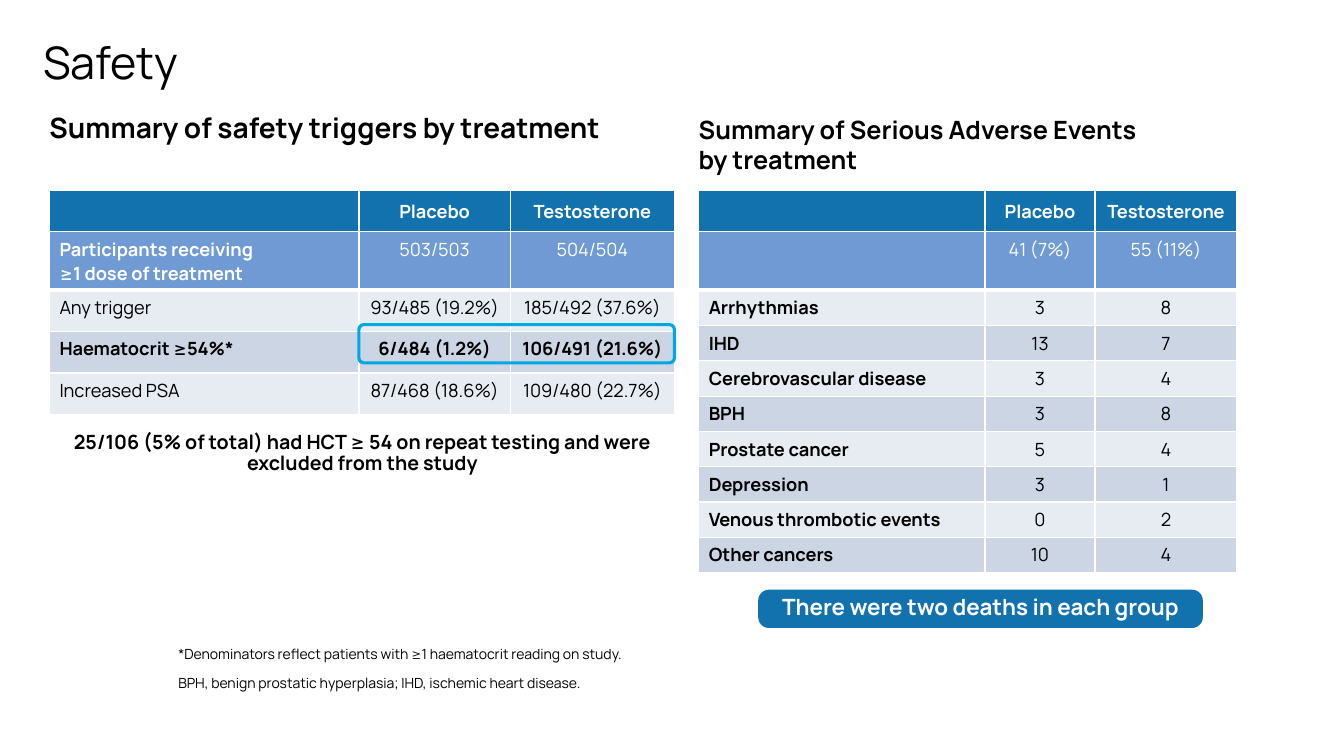
from dataclasses import dataclass

import pptx
import pptx.dml.color
import pptx.enum.shapes
import pptx.enum.text
import pptx.oxml
import pptx.oxml.ns
import pptx.util

SCALE = 9144  # EMU per px, at 100 px to the inch
FONT = "Manrope"
COLORS = {
    "black": "000000",
    "white": "FFFFFF",
    "header": "1272AE",
    "total": "6F9AD3",
    "light": "E7EBF2",
    "dark": "CCD5E3",
    "highlight": "00A8E1",
}
ALIGN = pptx.enum.text.PP_ALIGN
ANCHOR = pptx.enum.text.MSO_ANCHOR
ROUNDED = pptx.enum.shapes.MSO_SHAPE.ROUNDED_RECTANGLE


@dataclass
class Box:
    left: int
    top: int
    width: int
    height: int

    def emu(self) -> list[int]:
        return [px(v) for v in (self.left, self.top, self.width, self.height)]


@dataclass
class TextBlock:
    box: Box
    paragraphs: list[str]
    size: int
    bold: bool = False
    line_spacing: float = 0.9
    align: ALIGN = ALIGN.LEFT
    anchor: ANCHOR = ANCHOR.TOP
    inset: int = 10


@dataclass
class TableRow:
    cells: tuple[str, str, str]
    fill: str
    height: int
    label_bold: bool = False
    value_bold: bool = False
    anchor: ANCHOR = ANCHOR.TOP


def px(length: int) -> int:
    return pptx.util.Emu(length * SCALE)


def rgb(name: str) -> pptx.dml.color.RGBColor:
    return pptx.dml.color.RGBColor.from_string(COLORS[name])


def write(paragraph, text: str, size: int, color: str, bold: bool) -> None:
    for index, line in enumerate(text.split("\n")):
        if index:
            paragraph.add_line_break()
        run = paragraph.add_run()
        run.text = line
        run.font.name = FONT
        run.font.size = pptx.util.Pt(size)
        run.font.bold = bold
        run.font.color.rgb = rgb(color)


def add_text(slide, block: TextBlock) -> None:
    frame = slide.shapes.add_textbox(*block.box.emu()).text_frame
    frame.word_wrap = True
    frame.vertical_anchor = block.anchor
    frame.margin_left = px(block.inset)
    for index, text in enumerate(block.paragraphs):
        paragraph = frame.add_paragraph() if index else frame.paragraphs[0]
        paragraph.alignment = block.align
        paragraph.line_spacing = block.line_spacing
        if index:
            paragraph.space_before = pptx.util.Pt(10)
        write(paragraph, text, block.size, "black", block.bold)


def add_borders(cell, top: int, bottom: int) -> None:
    properties = cell._tc.get_or_add_tcPr()
    for side, points in (("L", 1), ("R", 1), ("T", top), ("B", bottom)):
        properties.append(pptx.oxml.parse_xml(
            f'<a:ln{side} {pptx.oxml.ns.nsdecls("a")} w="{pptx.util.Pt(points)}">'
            f'<a:solidFill><a:srgbClr val="{COLORS["white"]}"/></a:solidFill>'
            f'</a:ln{side}>'))


def add_table(slide, left: int, top: int, widths: list[int], rows: list[TableRow]) -> None:
    box = Box(left, top, sum(widths), sum(row.height for row in rows))
    table = slide.shapes.add_table(len(rows), len(widths), *box.emu()).table
    table.first_row = table.horz_banding = False
    for column, width in zip(table.columns, widths):
        column.width = px(width)
    for row_index, row in enumerate(rows):
        table.rows[row_index].height = px(row.height)
        color = "white" if row.fill in ("header", "total") else "black"
        for column_index, text in enumerate(row.cells):
            cell = table.cell(row_index, column_index)
            # The thick rule lies under the totals row
            add_borders(cell, 3 if row_index == 2 else 1, 3 if row_index == 1 else 1)
            cell.fill.solid()
            cell.fill.fore_color.rgb = rgb(row.fill)
            cell.vertical_anchor = row.anchor
            paragraph = cell.text_frame.paragraphs[0]
            paragraph.alignment = ALIGN.CENTER if column_index else ALIGN.LEFT
            if text:
                write(paragraph, text, 13, color, row.value_bold if column_index else row.label_bold)


def add_rounded(slide, box: Box, adjustment: float):
    shape = slide.shapes.add_shape(ROUNDED, *box.emu())
    shape.shadow.inherit = False
    shape.adjustments[0] = adjustment
    return shape


HEADER = TableRow(("", "Placebo", "Testosterone"), "header", 41, value_bold=True, anchor=ANCHOR.MIDDLE)
TRIGGERS = [
    HEADER,
    TableRow(("Participants receiving \n≥1 dose of treatment", "503/503", "504/504"), "total", 58, label_bold=True),
    TableRow(("Any trigger", "93/485 (19.2%)", "185/492 (37.6%)"), "light", 41),
    TableRow(("Haematocrit ≥54%*", "6/484 (1.2%)", "106/491 (21.6%)"), "dark", 41, True, True),
    TableRow(("Increased PSA", "87/468 (18.6%)", "109/480 (22.7%)"), "light", 41),
]
EVENTS = [
    ("Arrhythmias", "3", "8"),
    ("IHD", "13", "7"),
    ("Cerebrovascular disease", "3", "4"),
    ("BPH", "3", "8"),
    ("Prostate cancer", "5", "4"),
    ("Depression", "3", "1"),
    ("Venous thrombotic events", "0", "2"),
    ("Other cancers", "10", "4"),
]
ADVERSE_EVENTS = [HEADER, TableRow(("", "41 (7%)", "55 (11%)"), "total", 58)] + [
    TableRow(event, ("light", "dark")[index % 2], 35, label_bold=True, anchor=ANCHOR.MIDDLE)
    for index, event in enumerate(EVENTS)
]
TEXTS = [
    TextBlock(Box(167, 636, 1000, 55),
              ["*Denominators reflect patients with ≥1 haematocrit reading on study.",
               "BPH, benign prostatic hyperplasia; IHD, ischemic heart disease."],
              10, anchor=ANCHOR.BOTTOM),
    TextBlock(Box(49, 108, 620, 495), ["Summary of safety triggers by treatment"], 20, bold=True, inset=0),
    TextBlock(Box(693, 108, 561, 495), ["Summary of Serious Adverse Events\nby treatment"], 18,
              bold=True, line_spacing=1.0, inset=0),
    TextBlock(Box(33, 19, 900, 91), ["Safety"], 32, anchor=ANCHOR.MIDDLE),
    TextBlock(Box(26, 424, 667, 53),
              ["25/106 (5% of total) had HCT ≥ 54 on repeat testing and were excluded from the study"],
              14, bold=True, align=ALIGN.CENTER),
]


def main() -> None:
    presentation = pptx.Presentation()
    presentation.slide_width, presentation.slide_height = px(1333), px(750)
    slide = presentation.slides.add_slide(presentation.slide_layouts[6])

    # Title, headings and notes
    for block in TEXTS:
        add_text(slide, block)

    # Tables
    add_table(slide, 49, 189, [307, 150, 163], TRIGGERS)
    add_table(slide, 693, 189, [284, 109, 141], ADVERSE_EVENTS)

    # Deaths callout
    callout = add_rounded(slide, Box(752, 585, 441, 38), 0.28)
    callout.fill.solid()
    callout.fill.fore_color.rgb = rgb("header")
    callout.line.fill.background()
    frame = callout.text_frame
    frame.word_wrap = True
    frame.margin_top = frame.margin_bottom = 0
    frame.vertical_anchor = ANCHOR.TOP
    frame.paragraphs[0].alignment = ALIGN.CENTER
    write(frame.paragraphs[0], "There were two deaths in each group", 16, "white", True)

    # Haematocrit highlight
    highlight = add_rounded(slide, Box(356, 322, 313, 38), 0.13)
    highlight.fill.background()
    highlight.line.color.rgb = rgb("highlight")
    highlight.line.width = pptx.util.Pt(2.25)

    presentation.save("out.pptx")


if __name__ == "__main__":
    main()
